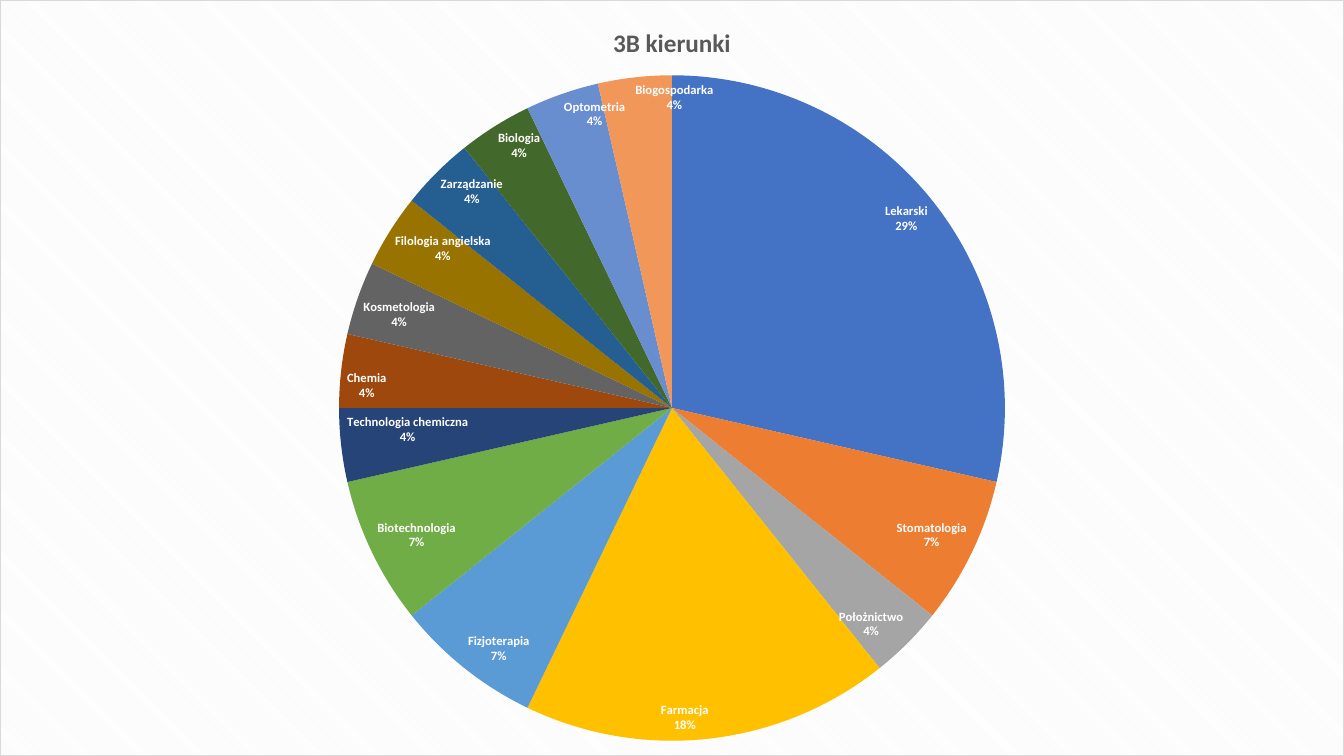
import dataclasses

import lxml.etree
import pptx
import pptx.chart.data
import pptx.dml.color
import pptx.enum.chart
import pptx.oxml
import pptx.oxml.ns
import pptx.util

Pt = pptx.util.Pt
qn = pptx.oxml.ns.qn


@dataclasses.dataclass(frozen=True)
class Theme:
    font: str = "Calibri"
    title_size: int = 18
    base_size: int = 10
    label_size: int = 9
    title: str = "595959"
    text: str = "000000"
    label: str = "FFFFFF"
    border: str = "D9D9D9"
    stripe: str = "F2F2F2"
    background: str = "FFFFFF"


THEME = Theme()
SLIDE_WIDTH, SLIDE_HEIGHT = Pt(960), Pt(540)
PIE_LEFT, PIE_TOP, PIE_SIZE = Pt(242), Pt(53.5), Pt(476)

COURSES = [
    ("Lekarski", 8, "4472C4"),
    ("Stomatologia", 2, "ED7D31"),
    ("Położnictwo", 1, "A5A5A5"),
    ("Farmacja", 5, "FFC000"),
    ("Fizjoterapia", 2, "5B9BD5"),
    ("Biotechnologia", 2, "70AD47"),
    ("Technologia chemiczna", 1, "264478"),
    ("Chemia", 1, "9E480E"),
    ("Kosmetologia", 1, "636363"),
    ("Filologia angielska", 1, "997300"),
    ("Zarządzanie", 1, "255E91"),
    ("Biologia", 1, "43682B"),
    ("Optometria", 1, "698ED0"),
    ("Biogospodarka", 1, "F1975A"),
]


def rgb(value):
    return pptx.dml.color.RGBColor.from_string(value)


def style_font(font, size, color, bold):
    font.name = THEME.font
    font.size = Pt(size)
    font.bold = bold
    font.color.rgb = rgb(color)


def add_pie(slide):
    data = pptx.chart.data.CategoryChartData()
    data.categories = [name for name, count, color in COURSES]
    data.add_series("Series 1", [count for name, count, color in COURSES])
    pie = slide.shapes.add_chart(
        pptx.enum.chart.XL_CHART_TYPE.PIE, 0, 0, SLIDE_WIDTH, SLIDE_HEIGHT, data
    ).chart
    pie.has_legend = False
    style_font(pie.font, THEME.base_size, THEME.text, False)
    return pie


def add_title(pie, wording):
    pie.has_title = True
    heading = pie.chart_title.text_frame.paragraphs[0].add_run()
    heading.text = wording
    style_font(heading.font, THEME.title_size, THEME.title, True)
    pie.chart_title.include_in_layout = False


def color_slices(pie):
    pie.plots[0].vary_by_categories = True
    courses = pie.plots[0].series[0]
    for index, (name, count, color) in enumerate(COURSES):
        slice_format = courses.points[index].format
        slice_format.fill.solid()
        slice_format.fill.fore_color.rgb = rgb(color)
        slice_format.line.fill.background()


def label_slices(pie):
    labels = pie.plots[0].series[0].data_labels
    labels.show_value = False
    labels.show_category_name = True
    labels.show_percentage = True
    labels.number_format = "0%"
    labels.number_format_is_linked = False
    labels.position = pptx.enum.chart.XL_LABEL_POSITION.INSIDE_END
    style_font(labels.font, THEME.label_size, THEME.label, True)
    separator = lxml.etree.Element(qn("c:separator"))
    separator.text = "\n"
    labels._element.find(qn("c:showBubbleSize")).addnext(separator)


def place_pie(pie):
    plot_area = pie._chartSpace.chart.plotArea
    for old_layout in plot_area.findall(qn("c:layout")):
        plot_area.remove(old_layout)
    layout = lxml.etree.Element(qn("c:layout"))
    manual = lxml.etree.SubElement(layout, qn("c:manualLayout"))
    settings = {
        "layoutTarget": "inner",
        "xMode": "edge",
        "yMode": "edge",
        "x": round(PIE_LEFT / SLIDE_WIDTH, 4),
        "y": round(PIE_TOP / SLIDE_HEIGHT, 4),
        "w": round(PIE_SIZE / SLIDE_WIDTH, 4),
        "h": round(PIE_SIZE / SLIDE_HEIGHT, 4),
    }
    for tag, value in settings.items():
        lxml.etree.SubElement(manual, qn("c:" + tag), val=str(value))
    plot_area.insert(0, layout)


def style_background(pie):
    space = pie._chartSpace
    space.insert(0, lxml.etree.Element(qn("c:roundedCorners"), val="0"))
    space.chart.addnext(pptx.oxml.parse_xml(
        f'<c:spPr {pptx.oxml.ns.nsdecls("c", "a")}>'
        '<a:pattFill prst="dkDnDiag">'
        f'<a:fgClr><a:srgbClr val="{THEME.stripe}"/></a:fgClr>'
        f'<a:bgClr><a:srgbClr val="{THEME.background}"/></a:bgClr>'
        '</a:pattFill>'
        f'<a:ln w="{Pt(0.75)}"><a:solidFill>'
        f'<a:srgbClr val="{THEME.border}"/>'
        '</a:solidFill></a:ln></c:spPr>'
    ))


def main():
    deck = pptx.Presentation()
    deck.slide_width, deck.slide_height = SLIDE_WIDTH, SLIDE_HEIGHT
    slide = deck.slides.add_slide(deck.slide_layouts[6])
    pie = add_pie(slide)
    add_title(pie, "3B kierunki")
    color_slices(pie)
    label_slices(pie)
    place_pie(pie)
    style_background(pie)
    deck.save("out.pptx")


if __name__ == "__main__":
    main()
